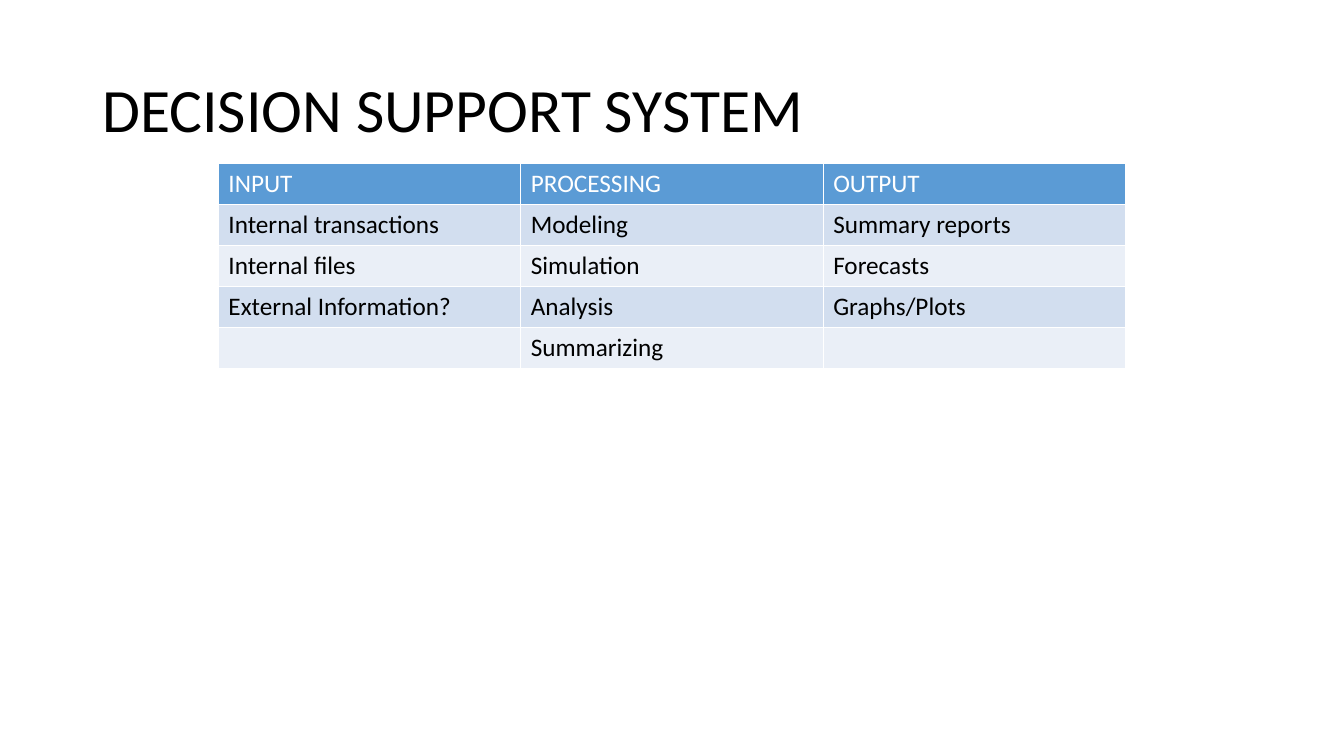
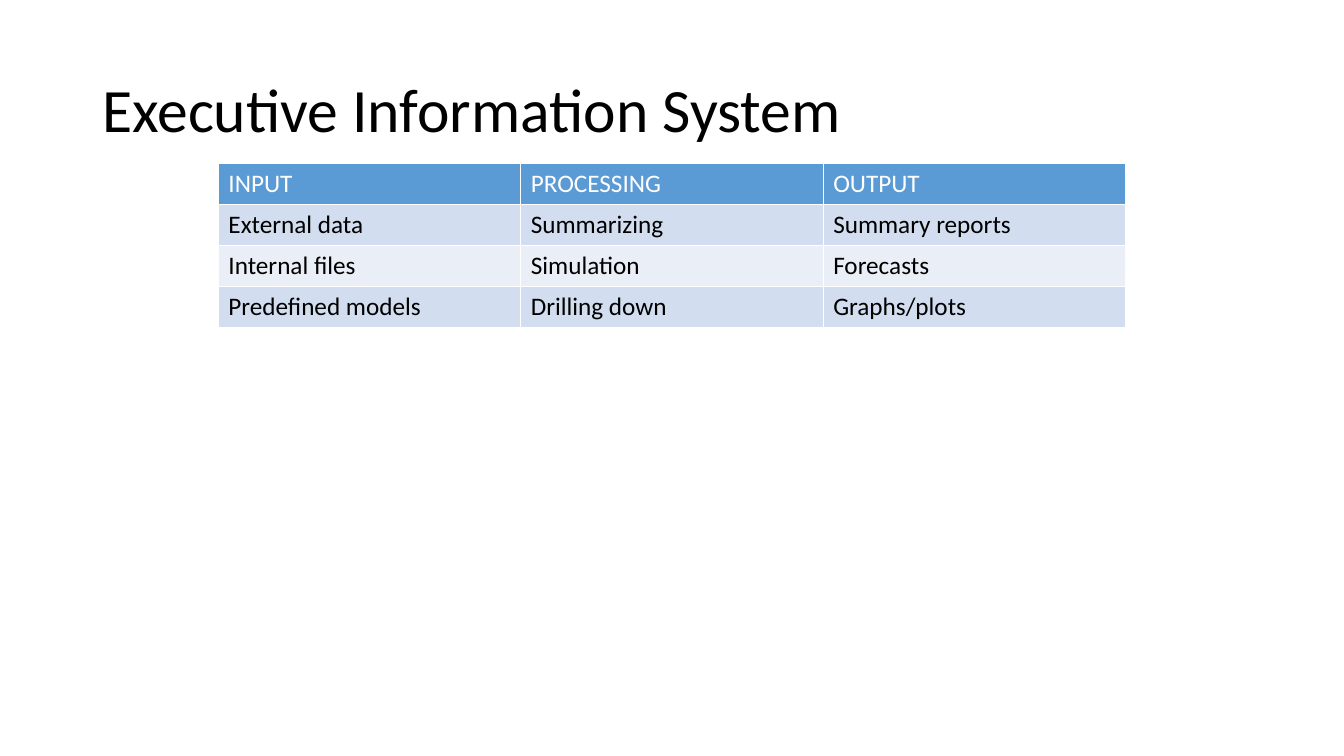
from lxml import etree
from pptx import Presentation
from pptx.dml.color import RGBColor
from pptx.enum.text import MSO_ANCHOR
from pptx.oxml.ns import qn
from pptx.util import Emu, Pt

PX = 9525
FONT = "Calibri"
MIDDLE = MSO_ANCHOR.MIDDLE

BLACK = RGBColor(0x00, 0x00, 0x00)
WHITE = RGBColor(0xFF, 0xFF, 0xFF)
BLUE = RGBColor(0x5B, 0x9B, 0xD5)
BANDS = (RGBColor(0xD2, 0xDE, 0xEF), RGBColor(0xEA, 0xEF, 0xF7))

HEADERS = ("INPUT", "PROCESSING", "OUTPUT")
SYSTEMS = (
    ("DECISION SUPPORT SYSTEM", (
        ("Internal transactions", "Modeling", "Summary reports"),
        ("Internal files", "Simulation", "Forecasts"),
        ("External Information?", "Analysis", "Graphs/Plots"),
        ("", "Summarizing", ""),
    )),
    ("Executive Information System", (
        ("External data", "Summarizing", "Summary reports"),
        ("Internal files", "Simulation", "Forecasts"),
        ("Predefined models", "Drilling down", "Graphs/plots"),
    )),
)


def px(n):
    return Emu(n * PX)


class Deck:
    def __init__(self):
        self.prs = Presentation()
        self.prs.slide_width = px(1280)
        self.prs.slide_height = px(720)

    def add_slide(self):
        self.s = self.prs.slides.add_slide(self.prs.slide_layouts[6])

    def format_text(self, p, size, color):
        for r in p.runs:
            r.font.name = FONT
            r.font.size = Pt(size)
            r.font.bold = False
            r.font.color.rgb = color

    def title(self, text):
        tf = self.s.shapes.add_textbox(px(88), px(38), px(1104), px(139)).text_frame
        tf.word_wrap = True
        tf.vertical_anchor = MIDDLE
        tf.text = text
        p = tf.paragraphs[0]
        p.line_spacing = 0.9
        self.format_text(p, 44, BLACK)

    def borders(self, cell):
        tc_pr = cell._tc.get_or_add_tcPr()
        for side in ("a:lnL", "a:lnR", "a:lnT", "a:lnB"):
            ln = etree.SubElement(tc_pr, qn(side), w=str(Pt(1)))
            fill = etree.SubElement(ln, qn("a:solidFill"))
            etree.SubElement(fill, qn("a:srgbClr"), val=str(WHITE))

    def cell(self, cell, text, fill, color):
        self.borders(cell)
        cell.fill.solid()
        cell.fill.fore_color.rgb = fill
        cell.text = text
        self.format_text(cell.text_frame.paragraphs[0], 18, color)

    def table(self, headers, body):
        rows = (headers, *body)
        table = self.s.shapes.add_table(
            len(rows), len(headers), px(208), px(156), px(864), px(39 * len(rows))).table
        for i, row in enumerate(rows):
            fill, color = (BANDS[(i - 1) % 2], BLACK) if i else (BLUE, WHITE)
            for j, text in enumerate(row):
                self.cell(table.cell(i, j), text, fill, color)


def main():
    deck = Deck()
    for name, body in SYSTEMS:
        deck.add_slide()
        deck.table(HEADERS, body)
        deck.title(name)
    deck.prs.save("out.pptx")


if __name__ == "__main__":
    main()
